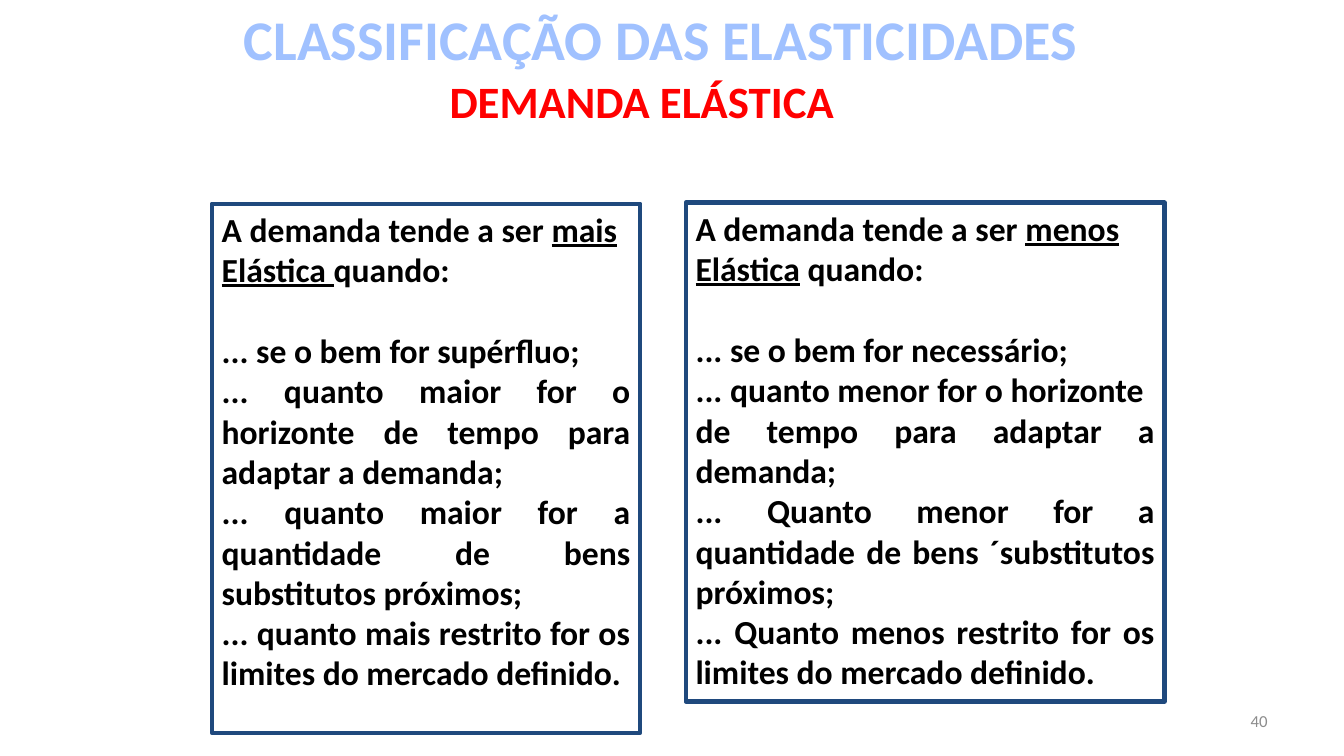
from dataclasses import dataclass

from pptx import Presentation
from pptx import util as u
from pptx.dml.color import RGBColor
from pptx.enum import shapes, text


@dataclass(frozen=True)
class Theme:
    font: str = "Calibri"
    title: str = "A0C1FF"
    accent: str = "FF0000"
    body: str = "000000"
    muted: str = "8C8C8C"
    border: str = "1F497D"
    title_size: int = 40
    sub_size: int = 32
    body_size: int = 24
    page_size: int = 12
    border_width: int = 3
    gap: int = 29


@dataclass(frozen=True)
class Area:
    """Place and size in grid cells."""
    col: float
    row: float
    cols: float
    rows: float


@dataclass(frozen=True)
class Label:
    area: Area
    words: str
    size: int
    color: str
    bold: bool = True
    align: text.PP_ALIGN = text.PP_ALIGN.LEFT
    anchor: text.MSO_ANCHOR = text.MSO_ANCHOR.TOP


@dataclass(frozen=True)
class Panel:
    """A framed list; every second piece of a heading line is underlined."""
    area: Area
    heading: list[list[str]]
    points: list[str]


THEME = Theme()
CELL = u.Inches(0.05)
LEFT, JUST = text.PP_ALIGN.LEFT, text.PP_ALIGN.JUSTIFY

LABELS = [
    Label(Area(191.2, 139, 62.2, 8), "40", THEME.page_size, THEME.muted, False,
          text.PP_ALIGN.RIGHT, text.MSO_ANCHOR.MIDDLE),
    Label(Area(46.4, 0, 203.2, 15.4), "CLASSIFICAÇÃO DAS ELASTICIDADES",
          THEME.title_size, THEME.title),
    Label(Area(87.2, 13.6, 97.6, 12.8), "DEMANDA ELÁSTICA",
          THEME.sub_size, THEME.accent),
]

PANELS = [
    Panel(
        Area(42, 40.4, 85, 105),
        [["A demanda tende a ser ", "mais", " ", "Elástica ", "quando:"]],
        ["... se o bem for supérfluo;",
         "... quanto maior for o horizonte de tempo para adaptar a demanda;",
         "... quanto maior for a quantidade de bens substitutos próximos;",
         "... quanto mais restrito for os limites do mercado definido."],
    ),
    Panel(
        Area(136, 40.2, 95, 99),
        [["A demanda tende a ser ", "menos"], ["", "Elástica", " quando:"]],
        ["... se o bem for necessário;",
         "... quanto menor for o horizonte",
         "de tempo para adaptar a demanda;",
         "... Quanto menor for a quantidade de bens ´substitutos próximos;",
         "... Quanto menos restrito for os limites do mercado definido."],
    ),
]


def place(area: Area) -> list[int]:
    return [round(n * CELL) for n in (area.col, area.row, area.cols, area.rows)]


def style(para, size: int, color: str, bold: bool, align) -> None:
    para.alignment = align
    for run in para.runs:
        run.font.name = THEME.font
        run.font.size = u.Pt(size)
        run.font.bold = bold
        run.font.color.rgb = RGBColor.from_string(color)


def draw_label(slide, label: Label) -> None:
    frame = slide.shapes.add_textbox(*place(label.area)).text_frame
    frame.word_wrap = True
    frame.vertical_anchor = label.anchor
    frame.text = label.words
    style(frame.paragraphs[0], label.size, label.color, label.bold, label.align)


def draw_panel(slide, panel: Panel) -> None:
    box = slide.shapes.add_shape(shapes.MSO_SHAPE.RECTANGLE, *place(panel.area))
    box.shadow.inherit = False
    box.fill.background()
    box.line.color.rgb = RGBColor.from_string(THEME.border)
    box.line.width = u.Pt(THEME.border_width)
    frame = box.text_frame
    frame.word_wrap = True
    frame.vertical_anchor = text.MSO_ANCHOR.TOP

    for i, line in enumerate(panel.heading):
        para = frame.add_paragraph() if i else frame.paragraphs[0]
        for j, piece in enumerate(line):
            if piece:
                run = para.add_run()
                run.text = piece
                run.font.underline = j % 2 == 1
        style(para, THEME.body_size, THEME.body, True, LEFT)
    para.space_after = u.Pt(THEME.gap)

    for point in panel.points:
        para = frame.add_paragraph()
        para.text = point
        style(para, THEME.body_size, THEME.body, True, JUST)


def main() -> None:
    deck = Presentation()
    deck.slide_width, deck.slide_height = u.Inches(13.33), u.Inches(7.5)
    slide = deck.slides.add_slide(deck.slide_layouts[6])
    for label in LABELS:
        draw_label(slide, label)
    for panel in PANELS:
        draw_panel(slide, panel)
    deck.save("out.pptx")


if __name__ == "__main__":
    main()
